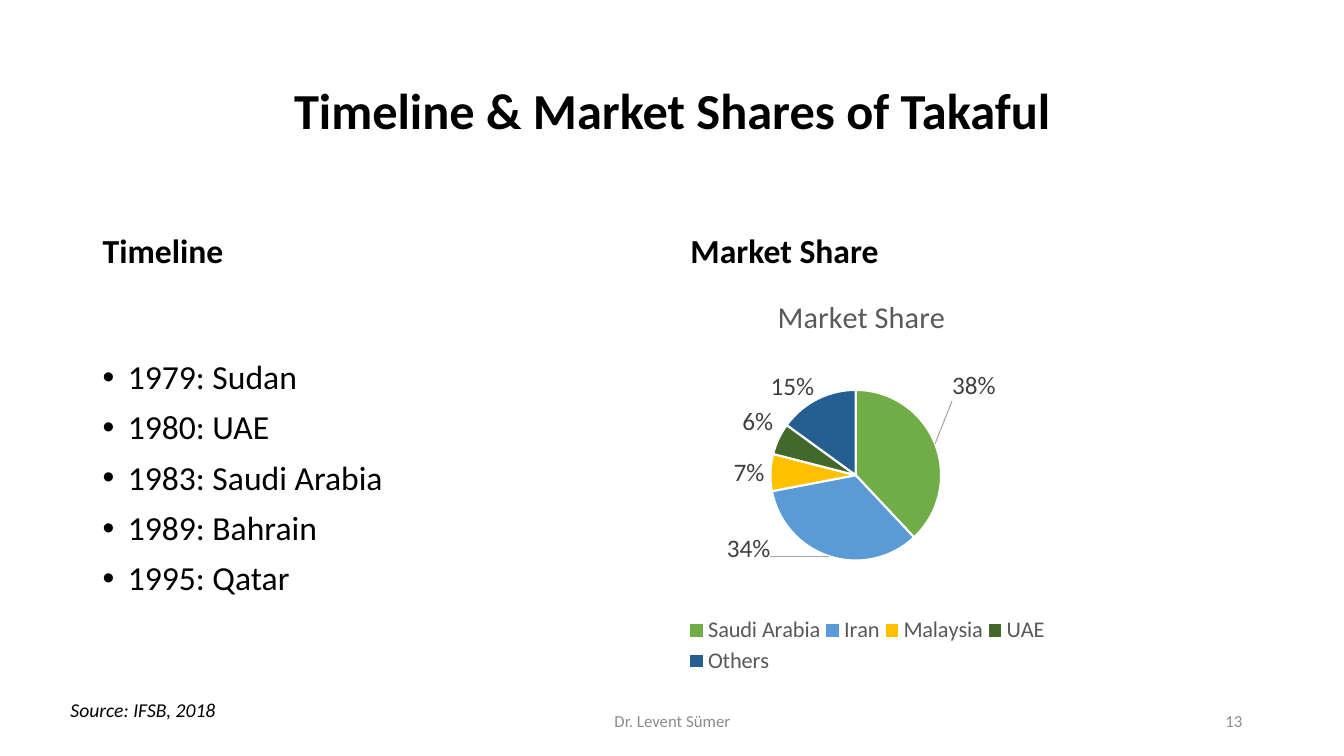
from lxml import etree
from pptx import Presentation
from pptx.chart.data import CategoryChartData as ChartData
from pptx.dml.color import RGBColor as RGB
from pptx.enum.chart import XL_CHART_TYPE as Kind
from pptx.enum.chart import XL_LABEL_POSITION as Spot
from pptx.enum.chart import XL_LEGEND_POSITION as Side
from pptx.enum.text import MSO_ANCHOR as Anchor
from pptx.enum.text import MSO_AUTO_SIZE as Fit
from pptx.enum.text import PP_ALIGN as Align
from pptx.oxml import parse_xml
from pptx.oxml.ns import nsdecls, qn
from pptx.util import Inches, Pt

FONT = "Calibri"
COLORS = {
    "text": "000000", "muted": "8C8C8C", "label": "404040",
    "legend": "595959", "edge": "FFFFFF", "leader": "A6A6A6",
}
EVENTS = ["1979: Sudan", "1980: UAE", "1983: Saudi Arabia",
          "1989: Bahrain", "1995: Qatar"]
SHARES = [  # name, share, colour, label shift
    ("Saudi Arabia", 0.38, "70AD47", (0.02, -0.1)),
    ("Iran", 0.34, "5B9BD5", (-0.1, -0.07)),
    ("Malaysia", 0.07, "FFC000", None),
    ("UAE", 0.06, "43682B", None),
    ("Others", 0.15, "255E91", (0, 0.02)),
]


def style(font, size, color, bold=False, italic=False):
    font.name, font.size = FONT, Pt(size)
    font.bold, font.italic = bold, italic
    font.color.rgb = RGB.from_string(color)


def add_text(slide, box, text, size, color="text", bold=False, italic=False,
             align=Align.LEFT, anchor=Anchor.MIDDLE, line=1.0, before=0):
    shape = slide.shapes.add_textbox(*map(Inches, box))
    frame = shape.text_frame
    frame.word_wrap = True
    frame.vertical_anchor = anchor
    frame.text = text
    for para in frame.paragraphs:
        para.alignment = align
        para.line_spacing = line
        para.space_before = Pt(before)
        for run in para.runs:
            style(run.font, size, COLORS[color], bold, italic)
    return frame


def add_bullets(frame):
    for para in frame.paragraphs:
        props = para._p.get_or_add_pPr()
        props.set("marL", str(Inches(0.25)))
        props.set("indent", str(-Inches(0.25)))
        etree.SubElement(props, qn("a:buFont")).set("typeface", "Arial")
        etree.SubElement(props, qn("a:buChar")).set("char", "•")


def make_layout(x, y, w=None, h=None, inner=False):
    parts = [("layoutTarget", "inner")] if inner else []
    if w:
        parts += [("xMode", "edge"), ("yMode", "edge")]
    parts += [("x", x), ("y", y)]
    if w:
        parts += [("w", w), ("h", h)]
    body = "".join(f'<c:{tag} val="{val}"/>' for tag, val in parts)
    return parse_xml(f'<c:layout {nsdecls("c")}><c:manualLayout>{body}'
                     '</c:manualLayout></c:layout>')


def set_layout(parent, layout, after=None):
    for old in parent.findall(qn("c:layout")):
        parent.remove(old)
    if after is None:
        parent.insert(0, layout)
    else:
        parent.find(qn(after)).addnext(layout)


def add_leaders(labels):
    tail = parse_xml(
        f'<c:leaderLines {nsdecls("c", "a")}><c:spPr><a:ln w="9525">'
        f'<a:solidFill><a:srgbClr val="{COLORS["leader"]}"/></a:solidFill>'
        '</a:ln></c:spPr></c:leaderLines>')
    for old in labels.findall(qn("c:showLeaderLines")):
        labels.remove(old)
    etree.SubElement(labels, qn("c:showLeaderLines")).set("val", "1")
    labels.append(tail)


def add_pie(slide, box):
    data = ChartData(number_format="0%")
    data.categories = [name for name, *_ in SHARES]
    data.add_series("Series 1", [share for _, share, *_ in SHARES])
    chart = slide.shapes.add_chart(
        Kind.PIE, *map(Inches, box), data).chart
    style(chart.font, 18, COLORS["text"])

    # Title and legend
    chart.has_title = True
    title = chart.chart_title.text_frame
    title.text = "Market Share"
    style(title.paragraphs[0].runs[0].font, 21.6, COLORS["legend"])
    chart.has_legend = True
    legend = chart.legend
    legend.position = Side.BOTTOM
    legend.include_in_layout = False
    style(legend.font, 16, COLORS["legend"])
    set_layout(legend._element, make_layout(0.19, 0.83, 0.64, 0.16),
               "c:legendPos")

    # Slices and labels
    plot = chart.plots[0]
    plot.vary_by_categories = True
    series = plot.series[0]
    labels = series.data_labels
    labels.show_value = True
    labels.number_format = "0%"
    labels.number_format_is_linked = False
    labels.position = Spot.OUTSIDE_END
    style(labels.font, 18, COLORS["label"])
    for i, (_, _, color, shift) in enumerate(SHARES):
        point = series.points[i]
        point.format.fill.solid()
        point.format.fill.fore_color.rgb = RGB.from_string(color)
        edge = point.format.line
        edge.width = Pt(1.5)
        edge.color.rgb = RGB.from_string(COLORS["edge"])
        if shift:
            label = point.data_label
            style(label.font, 18, COLORS["label"])
            label.position = Spot.OUTSIDE_END
            set_layout(label._dLbl, make_layout(*shift), "c:idx")
    add_leaders(labels._element)
    set_layout(chart._chartSpace.chart.plotArea,
               make_layout(0.34, 0.28, 0.3, 0.42, inner=True))


def main():
    prs = Presentation()
    prs.slide_width, prs.slide_height = Inches(13.33), Inches(7.5)
    slide = prs.slides.add_slide(prs.slide_layouts[6])

    # Title and column heads
    add_text(slide, (0.92, 0.4, 11.5, 1.45),
             "Timeline & Market Shares of Takaful", 36, bold=True,
             align=Align.CENTER, line=0.9)
    for left, head in ((0.92, "Timeline"), (6.75, "Market Share")):
        add_text(slide, (left, 1.84, 5.65, 0.9), head, 24, bold=True,
                 anchor=Anchor.BOTTOM, line=0.9, before=10)

    # Timeline and chart
    add_bullets(add_text(slide, (0.92, 2.74, 5.64, 4.03),
                         "\n".join(EVENTS), 24, line=0.9, before=10))
    add_pie(slide, (5.71, 2.74, 5.67, 4.03))

    # Footer and source
    add_text(slide, (4.42, 6.95, 4.5, 0.4), "Dr. Levent Sümer", 12,
             "muted", align=Align.CENTER)
    add_text(slide, (9.42, 6.95, 3, 0.4), "13", 12, "muted",
             align=Align.RIGHT)
    source = add_text(slide, (0.6, 6.87, 2.52, 0.34), "Source: IFSB, 2018",
                      14, italic=True, anchor=Anchor.TOP)
    source.auto_size = Fit.SHAPE_TO_FIT_TEXT

    prs.save("out.pptx")


if __name__ == "__main__":
    main()
